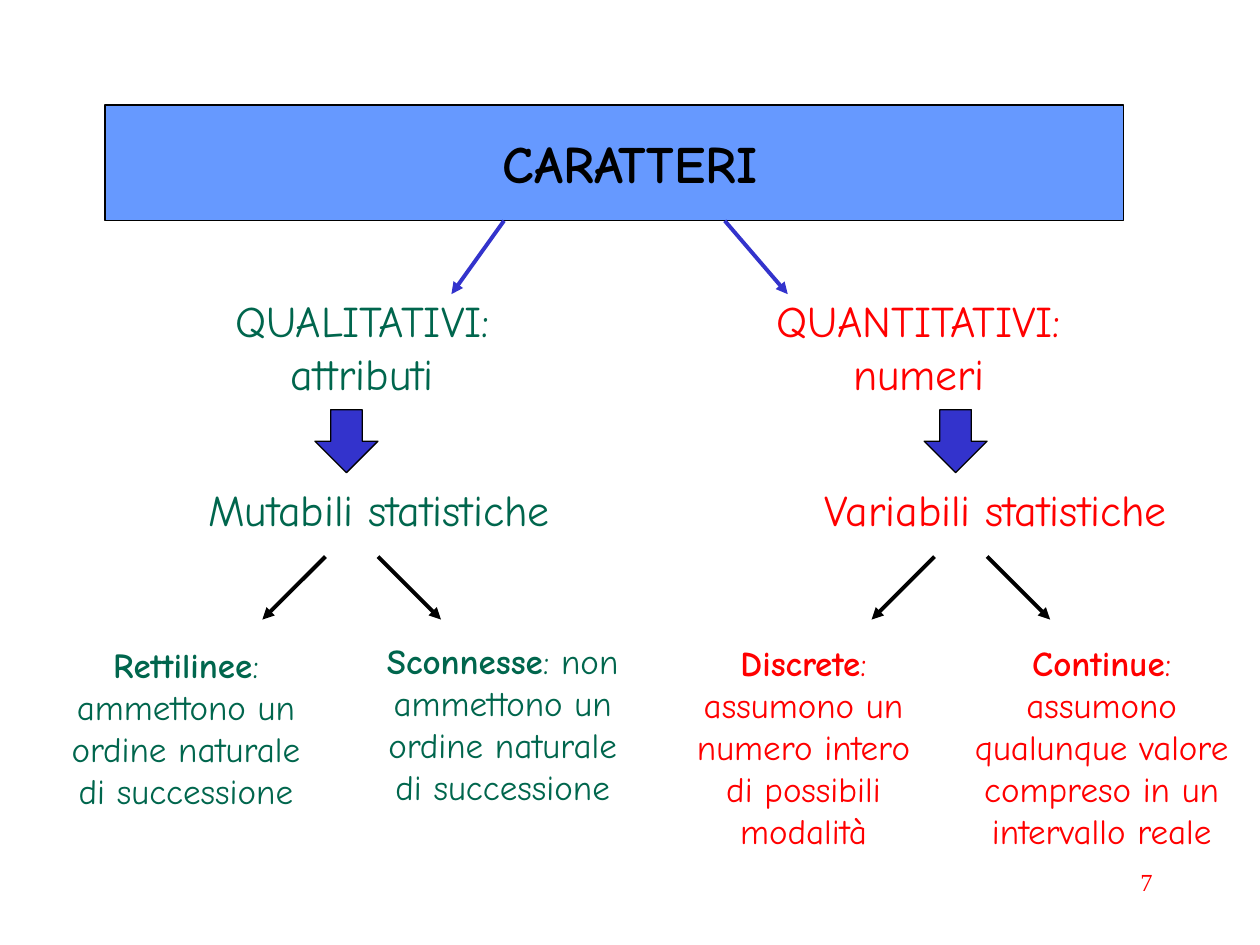
import pptx
import pptx.util
import pptx.dml.color
import pptx.enum.shapes
import pptx.enum.text
import pptx.oxml
import pptx.oxml.ns

Cm, Pt = pptx.util.Cm, pptx.util.Pt
SHAPE = pptx.enum.shapes.MSO_SHAPE
ALIGN = pptx.enum.text.PP_ALIGN
ANCHOR = pptx.enum.text.MSO_ANCHOR

COLORS = {
    "black": "000000",
    "banner": "6699FF",
    "arrow": "3333CC",
    "green": "00664D",
    "red": "FF0000",
}
COLUMN_STEP = 12.28  # distance between the two halves of the scheme, cm


def rgb(name):
    return pptx.dml.color.RGBColor.from_string(COLORS[name])


def write(tf, text, lead="", size=25, color="black", bold=False,
          font="Comic Neue", align=ALIGN.CENTER, anchor=ANCHOR.MIDDLE):
    """Fill a text frame: an optional bold lead, then text with line breaks."""
    tf.word_wrap = True
    tf.auto_size = pptx.enum.text.MSO_AUTO_SIZE.NONE
    tf.vertical_anchor = anchor
    p = tf.paragraphs[0]
    p.alignment = align
    parts = [(lead, True)] if lead else []
    for i, line in enumerate(text.split("\n")):
        parts += [(None, bold)] if i else []
        parts.append((line, bold))
    for content, is_bold in parts:
        if content is None:
            p.add_line_break()
            continue
        r = p.add_run()
        r.text = content
        r.font.name, r.font.size, r.font.bold = font, Pt(size), is_bold
        r.font.color.rgb = rgb(color)


def add_text(s, box, text, **fmt):
    sp = s.shapes.add_textbox(*map(Cm, box))
    write(sp.text_frame, text, **fmt)


def add_block(s, kind, box, fill):
    sp = s.shapes.add_shape(kind, *map(Cm, box))
    sp.shadow.inherit = False
    sp.fill.solid()
    sp.fill.fore_color.rgb = rgb(fill)
    sp.line.color.rgb = rgb("black")
    sp.line.width = Pt(0.75)
    return sp


def add_arrow(s, start, end, color):
    cn = s.shapes.add_connector(pptx.enum.shapes.MSO_CONNECTOR.STRAIGHT,
                                *map(Cm, start + end))
    cn.line.color.rgb = rgb(color)
    cn.line.width = Pt(2.25)
    ns = pptx.oxml.ns.nsdecls("a")
    cn.line._get_or_add_ln().append(
        pptx.oxml.parse_xml(f'<a:tailEnd {ns} type="triangle"/>'))
    cn._element.spPr.append(pptx.oxml.parse_xml(f"<a:effectLst {ns}/>"))


def add_branch(s, x):
    """Block arrow and the two diverging arrows below it."""
    add_block(s, SHAPE.DOWN_ARROW, (x, 8.26, 1.27, 1.27), "arrow")
    add_arrow(s, (x + 0.21, 11.22), (x - 1.06, 12.49), "black")
    add_arrow(s, (x + 1.27, 11.22), (x + 2.54, 12.49), "black")


def main():
    prs = pptx.Presentation()
    prs.slide_width, prs.slide_height = Cm(25.4), Cm(19.05)
    s = prs.slides.add_slide(prs.slide_layouts[5])

    # Banner, placed behind the title
    banner = add_block(s, SHAPE.RECTANGLE, (2.12, 2.12, 20.53, 2.33), "banner")
    title = s.shapes.title
    title.left, title.top, title.width, title.height = map(
        Cm, (1.91, 1.69, 21.59, 3.18))
    write(title.text_frame, "CARATTERI", size=30, bold=True)
    title._element.addprevious(banner._element)

    # Arrows from the banner to the two kinds
    add_arrow(s, (10.16, 4.45), (9.1, 5.93), "arrow")
    add_arrow(s, (14.61, 4.45), (15.88, 5.93), "arrow")

    # Kinds of character and the names of their data
    add_text(s, (2.33, 4.23, 9.95, 5.51), "QUALITATIVI:\nattributi", color="green")
    add_text(s, (13.55, 4.23, 9.95, 5.51), "QUANTITATIVI:\nnumeri", color="red")
    add_text(s, (3.18, 9.1, 8.92, 2.33), "Mutabili statistiche", color="green")
    add_text(s, (15.45, 9.1, 9.25, 2.33), "Variabili statistiche", color="red")
    for column in range(2):
        add_branch(s, 6.35 + column * COLUMN_STEP)

    # Definitions: left, top, width, colour, lead, text
    definitions = [
        (0.89, 12.12, 5.72, "green", "Rettilinee",
         ": ammettono un ordine naturale di successione"),
        (7.29, 12.04, 5.69, "green", "Sconnesse",
         ": non ammettono un ordine naturale di successione"),
        (13.51, 12.5, 5.38, "red", "Discrete",
         ": assumono un numero intero di possibili modalità"),
        (19.25, 12.5, 5.92, "red", "Continue",
         ":\nassumono qualunque valore compreso in un intervallo reale"),
    ]
    for x, y, width, color, lead, text in definitions:
        add_text(s, (x, y, width, 5.08), text, lead=lead, size=20, color=color)

    # Slide number
    add_text(s, (18.2, 17.35, 5.29, 1.27), "7", size=14, color="red",
             font="Times New Roman", align=ALIGN.RIGHT, anchor=ANCHOR.TOP)

    prs.save("out.pptx")


if __name__ == "__main__":
    main()
